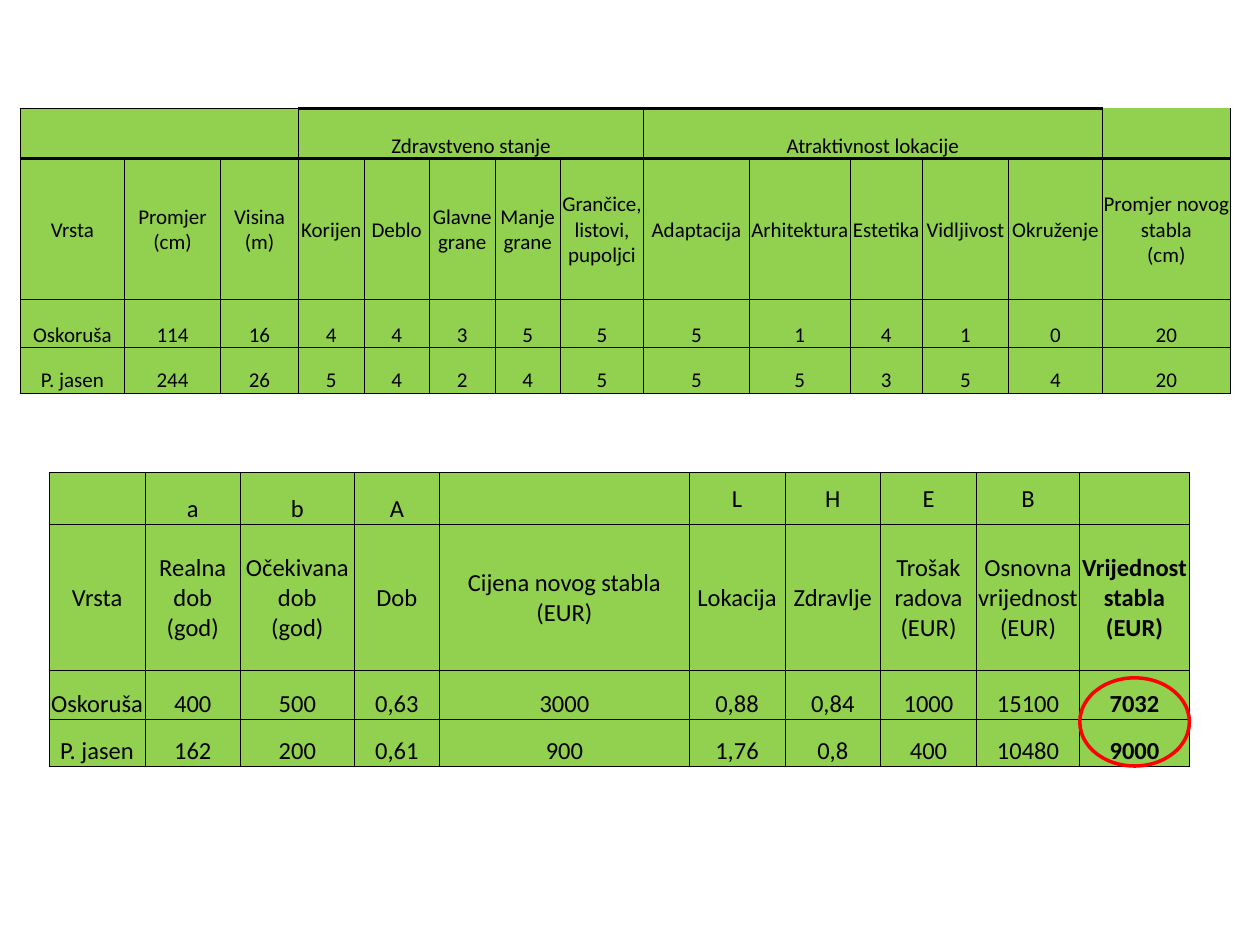
from lxml import etree
from pptx import Presentation
from pptx.dml.color import RGBColor
from pptx.enum.shapes import MSO_SHAPE
from pptx.enum.text import MSO_ANCHOR, PP_ALIGN
from pptx.oxml.ns import qn
from pptx.util import Inches, Pt

GREEN = RGBColor(0x92, 0xD0, 0x50)
BLACK = RGBColor(0, 0, 0)
RED = RGBColor(0xFF, 0, 0)
FONT = "Calibri"
THIN, THICK = 0.5, 2
LOW, MID = MSO_ANCHOR.BOTTOM, MSO_ANCHOR.MIDDLE
CENTER = PP_ALIGN.CENTER
OVAL = MSO_SHAPE.OVAL

TREES = {
    "at": (0.16, 0.86),
    "size": 12,
    "cols": [0.83, 0.76, 0.62] + [0.52] * 4
            + [0.66, 0.84, 0.8, 0.57, 0.69, 0.74, 1.02],
    "rows": [0.4, 1.12, 0.38, 0.36],
    "cells": [
        [""] * 3 + ["Zdravstveno stanje"] + [""] * 4
        + ["Atraktivnost lokacije"] + [""] * 5,
        ["Vrsta", "Promjer (cm)", "Visina (m)", "Korijen", "Deblo",
         "Glavne grane", "Manje grane", "Grančice, listovi, pupoljci",
         "Adaptacija", "Arhitektura", "Estetika", "Vidljivost", "Okruženje",
         "Promjer novog stabla\n(cm)"],
        ["Oskoruša", 114, 16, 4, 4, 3, 5, 5, 5, 1, 4, 1, 0, 20],
        ["P. jasen", 244, 26, 5, 4, 2, 4, 5, 5, 5, 3, 5, 4, 20],
    ],
}
VALUES = {
    "at": (0.39, 3.75),
    "size": 14,
    "cols": [0.76, 0.76, 0.9, 0.68, 1.98, 0.76, 0.76, 0.76, 0.82, 0.87],
    "rows": [0.41, 1.16, 0.39, 0.37],
    "cells": [
        ["", "a", "b", "A", "", "L", "H", "E", "B", ""],
        ["Vrsta", "Realna dob (god)", "Očekivana dob\n(god)", "Dob",
         "Cijena novog stabla (EUR)", "Lokacija", "Zdravlje",
         "Trošak radova (EUR)", "Osnovna vrijednost (EUR)",
         "Vrijednost stabla (EUR)"],
        ["Oskoruša", 400, 500, "0,63", 3000, "0,88", "0,84", 1000, 15100, 7032],
        ["P. jasen", 162, 200, "0,61", 900, "1,76", "0,8", 400, 10480, 9000],
    ],
}


def edge(cell, side, width):
    """Draw one border of a cell; a width of 0 hides it."""
    props = cell._tc.get_or_add_tcPr()
    line = etree.SubElement(props, qn("a:ln" + side), w=str(Pt(width)))
    if not width:
        etree.SubElement(line, qn("a:noFill"))
        return
    fill = etree.SubElement(line, qn("a:solidFill"))
    etree.SubElement(fill, qn("a:srgbClr"), val=str(BLACK))


def style(cell, text, size, anchor, bold, top, base):
    for side, width in zip("LRTB", (THIN, THIN, top, base)):
        edge(cell, side, width)
    cell.fill.solid()
    cell.fill.fore_color.rgb = GREEN
    cell.margin_left = cell.margin_right = cell.margin_top = Inches(0.01)
    cell.margin_bottom = 0
    cell.vertical_anchor = anchor
    cell.text = str(text)
    for para in cell.text_frame.paragraphs:
        para.alignment = CENTER
        font = para.font
        font.name, font.size, font.bold = FONT, Pt(size), bold
        font.color.rgb = BLACK


def grid(slide, data, spans=(), mids=(), bold=None, rule=None):
    """Add a table; rule(row, col) gives the top and bottom border widths."""
    cols, rows = data["cols"], data["rows"]
    box = [Inches(n) for n in (*data["at"], sum(cols), sum(rows))]
    frame = slide.shapes.add_table(len(rows), len(cols), *box)
    table = frame.table
    table.first_row = table.horz_banding = False
    for col, width in zip(table.columns, cols):
        col.width = Inches(width)
    for row, height in zip(table.rows, rows):
        row.height = Inches(height)
    for r, line in enumerate(data["cells"]):
        for c, text in enumerate(line):
            anchor = MID if r == 1 or (r == 0 and c in mids) else LOW
            top, base = rule(r, c) if rule else (THIN, THIN)
            style(table.cell(r, c), text, data["size"], anchor,
                  c == bold, top, base)
    for first, last in spans:
        table.cell(0, first).merge(table.cell(0, last))


def rule(row, col):
    """Thick lines around the group headings; the last one is open on top."""
    if row == 0:
        top = THIN if col < 3 else THICK if col < 13 else 0
        return top, THICK
    return (THICK if row == 1 else THIN), THIN


def ring(slide, data):
    """Circle the results in the last column of a table."""
    wide, high = data["cols"][-1], 0.7
    left = data["at"][0] + sum(data["cols"]) - wide
    top = data["at"][1] + sum(data["rows"]) - high
    oval = slide.shapes.add_shape(
        OVAL, *[Inches(n) for n in (left, top, wide, high)])
    oval.shadow.inherit = False
    oval.fill.background()
    oval.line.color.rgb = RED
    oval.line.width = Pt(2)


def main():
    deck = Presentation()
    deck.slide_width, deck.slide_height = Inches(10), Inches(7.5)
    slide = deck.slides.add_slide(deck.slide_layouts[6])
    grid(slide, TREES, spans=[(0, 2), (3, 7), (8, 12)], rule=rule)
    grid(slide, VALUES, mids=range(5, 9), bold=len(VALUES["cols"]) - 1)
    ring(slide, VALUES)
    deck.save("out.pptx")


if __name__ == "__main__":
    main()
